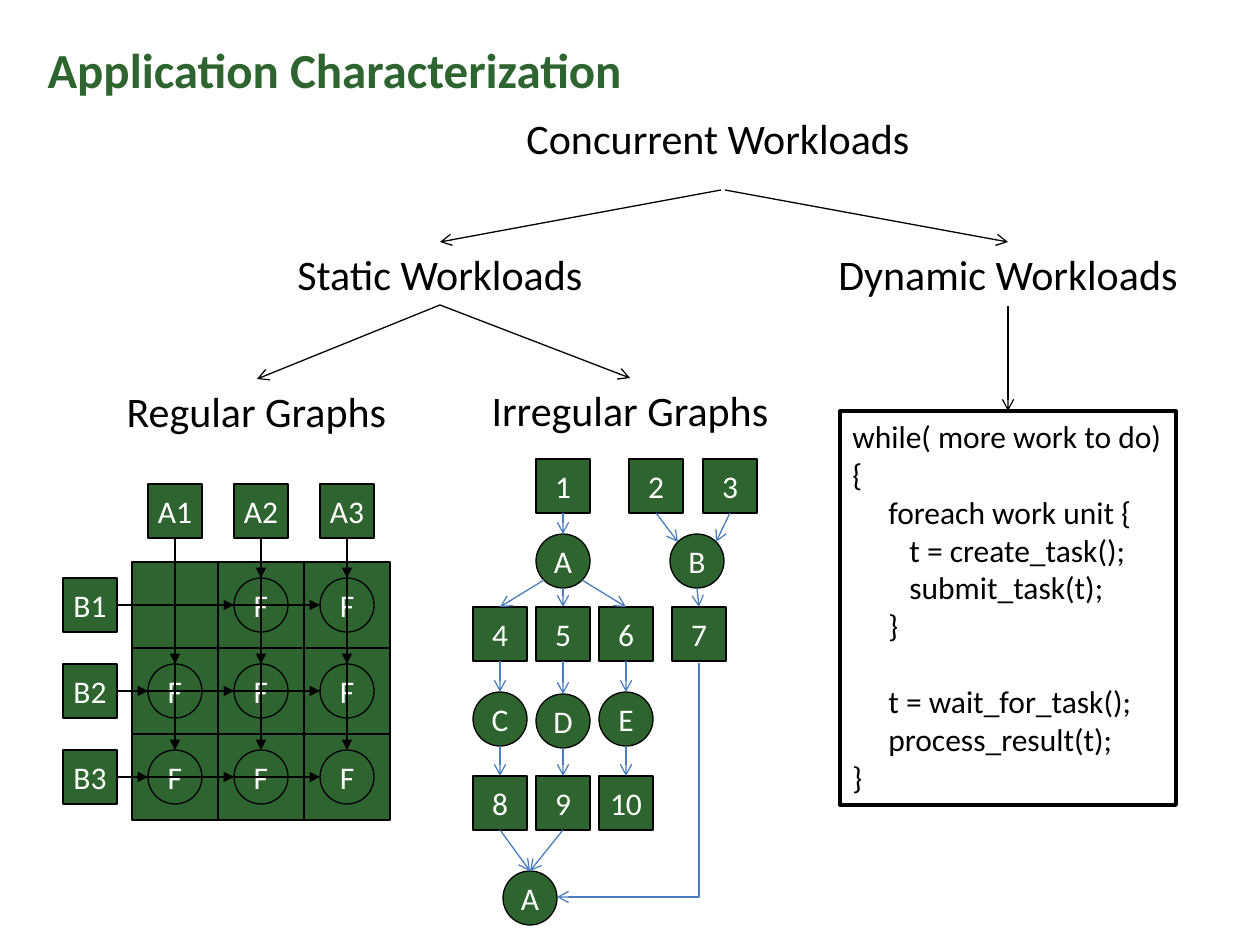
from lxml.etree import SubElement
from pptx import Presentation
from pptx.dml.color import RGBColor
from pptx.enum.shapes import MSO_CONNECTOR as Connector, MSO_SHAPE as Shape
from pptx.enum.text import MSO_ANCHOR as Anchor, PP_ALIGN as Align
from pptx.oxml.ns import qn
from pptx.util import Pt

PX = 914400 / 126
GREEN = RGBColor(0x2E, 0x64, 0x2F)
BLUE = RGBColor(0x4B, 0x7E, 0xBC)
BLACK = RGBColor(0, 0, 0)
WHITE = RGBColor(255, 255, 255)
NODE = 54
HALF = NODE // 2
CELL = 86
GRID_LEFT, GRID_TOP = 132, 562
INSET = 16
ROW_LABEL_LEFT, COLUMN_LABEL_TOP = 63, 484

presentation = Presentation()
presentation.slide_width = round(1260 * PX)
presentation.slide_height = round(945 * PX)
slide = presentation.slides.add_slide(presentation.slide_layouts[5])


def add_node(kind, left, top, label="", size=NODE):
    shape = slide.shapes.add_shape(kind, *(round(n * PX) for n in (left, top, size, size)))
    shape.shadow.inherit = False
    shape.fill.solid()
    shape.fill.fore_color.rgb = GREEN
    shape.line.color.rgb = BLACK
    shape.line.width = Pt(0.75)
    if label:
        frame = shape.text_frame
        frame.word_wrap = False
        frame.vertical_anchor = Anchor.MIDDLE
        paragraph = frame.paragraphs[0]
        paragraph.alignment = Align.CENTER
        run = paragraph.add_run()
        run.text = label
        run.font.name = "Calibri"
        run.font.size = Pt(18)
        run.font.color.rgb = WHITE


def add_arrow(start, end, color=BLACK, head="arrow", kind=Connector.STRAIGHT):
    connector = slide.shapes.add_connector(kind, *(round(n * PX) for n in (*start, *end)))
    connector.line.color.rgb = color
    connector.line.width = Pt(0.75)
    properties = connector.element.spPr
    SubElement(properties.find(qn("a:ln")), qn("a:tailEnd"), type=head)
    SubElement(properties, qn("a:effectLst"))
    return connector


title = slide.shapes.title
title.left, title.top, title.width, title.height = (round(n * PX) for n in (35, 33, 609, 72))
title.text_frame.word_wrap = False
title.text_frame.vertical_anchor = Anchor.TOP
paragraph = title.text_frame.paragraphs[0]
paragraph.alignment = Align.LEFT
run = paragraph.add_run()
run.text = "Application Characterization"
run.font.name = "Calibri"
run.font.size = Pt(28)
run.font.bold = True
run.font.color.rgb = GREEN

headings = [
    ("Concurrent Workloads", 514, 106, 412, Align.LEFT),
    ("Static Workloads", 283, 242, 314, Align.CENTER),
    ("Dynamic Workloads", 824, 242, 368, Align.CENTER),
    ("Regular Graphs", 113, 379, 287, Align.CENTER),
    ("Irregular Graphs", 463, 378, 334, Align.CENTER),
]
for text, left, top, width, alignment in headings:
    box = slide.shapes.add_textbox(*(round(n * PX) for n in (left, top, width, 63)))
    box.text_frame.word_wrap = False
    paragraph = box.text_frame.paragraphs[0]
    paragraph.alignment = alignment
    run = paragraph.add_run()
    run.text = text
    run.font.name = "Calibri"
    run.font.size = Pt(24)
    run.font.color.rgb = BLACK

tree_branches = [
    ((721, 190), (440, 242)),
    ((725, 190), (1008, 242)),
    ((440, 305), (257, 379)),
    ((440, 305), (630, 378)),
    ((1008, 306), (1008, 411)),
]
for start, end in tree_branches:
    add_arrow(start, end)

node_lefts = [GRID_LEFT + INSET + CELL * i for i in range(3)]
node_tops = [GRID_TOP + INSET + CELL * i for i in range(3)]
positions = [(row, column) for row in range(3) for column in range(3)]
for i in range(3):
    add_node(Shape.RECTANGLE, ROW_LABEL_LEFT, node_tops[i], f"B{i + 1}")
    add_node(Shape.RECTANGLE, node_lefts[i], COLUMN_LABEL_TOP, f"A{i + 1}")
for row, column in positions:
    add_node(Shape.RECTANGLE, GRID_LEFT + CELL * column, GRID_TOP + CELL * row, size=CELL)
filled_positions = positions[1:]
for row, column in filled_positions:
    add_node(Shape.OVAL, node_lefts[column], node_tops[row], "F")
for row, column in filled_positions:
    left, top = node_lefts[column], node_tops[row]
    add_arrow((ROW_LABEL_LEFT + NODE, top + HALF), (left, top + HALF), head="triangle")
    add_arrow((left + HALF, COLUMN_LABEL_TOP + NODE), (left + HALF, top), head="triangle")

tasks = {
    "1": (536, 459), "2": (629, 459), "3": (703, 459),
    "4": (473, 607), "5": (536, 607), "6": (599, 607), "7": (672, 607),
    "8": (473, 776), "9": (536, 776), "10": (599, 776),
}
joins = {
    "A": (536, 534), "B": (670, 534), "C": (473, 692),
    "D": (536, 694), "E": (599, 692), "End": (503, 871),
}
for label, (left, top) in tasks.items():
    add_node(Shape.RECTANGLE, left, top, label)
for name, (left, top) in joins.items():
    add_node(Shape.OVAL, left, top, "A" if name == "End" else name)

nodes = tasks | joins
TOP, BOTTOM = (HALF, 0), (HALF, NODE)
UPPER_LEFT, UPPER_RIGHT, LOWER_LEFT, LOWER_RIGHT = (8, 8), (46, 8), (8, 46), (46, 46)
edges = [
    ("1", BOTTOM, "A", TOP), ("2", BOTTOM, "B", UPPER_LEFT), ("3", BOTTOM, "B", UPPER_RIGHT),
    ("A", LOWER_LEFT, "4", TOP), ("A", BOTTOM, "5", TOP), ("A", LOWER_RIGHT, "6", TOP),
    ("B", BOTTOM, "7", TOP),
    ("4", BOTTOM, "C", TOP), ("5", BOTTOM, "D", TOP), ("6", BOTTOM, "E", TOP),
    ("C", BOTTOM, "8", TOP), ("D", BOTTOM, "9", TOP), ("E", BOTTOM, "10", TOP),
    ("8", BOTTOM, "End", TOP), ("9", BOTTOM, "End", TOP),
]
for source, source_site, target, target_site in edges:
    start = [a + b for a, b in zip(nodes[source], source_site)]
    end = [a + b for a, b in zip(nodes[target], target_site)]
    add_arrow(start, end, BLUE)

elbow = add_arrow((511, 709), (745, 851), BLUE, kind=Connector.ELBOW)
elbow.element.spPr.find(qn("a:prstGeom")).set("prst", "bentConnector2")
elbow.element.spPr.find(qn("a:xfrm")).set("rot", "5400000")

code_box = slide.shapes.add_shape(Shape.RECTANGLE, *(round(n * PX) for n in (840, 411, 336, 394)))
code_box.shadow.inherit = False
code_box.fill.background()
code_box.line.color.rgb = BLACK
code_box.line.width = Pt(2.25)
code_box.text_frame.word_wrap = True
code_box.text_frame.vertical_anchor = Anchor.TOP
code_lines = [
    ("while( more work to do) {", 0, 0),
    ("foreach work unit {", 36, 0),
    ("t = create_task();", 57, 0),
    ("submit_task(t);", 57, 0),
    ("}", 36, 0),
    ("t = wait_for_task();", 36, 22),
    ("process_result(t);", 36, 0),
    ("}", 0, 0),
]
for i, (text, indent, space_before) in enumerate(code_lines):
    frame = code_box.text_frame
    paragraph = frame.add_paragraph() if i else frame.paragraphs[0]
    paragraph.alignment = Align.LEFT
    paragraph.space_before = Pt(space_before)
    paragraph._p.get_or_add_pPr().set("marL", str(round(indent * PX)))
    run = paragraph.add_run()
    run.text = text
    run.font.name = "Calibri"
    run.font.size = Pt(18)
    run.font.color.rgb = BLACK

presentation.save("out.pptx")
